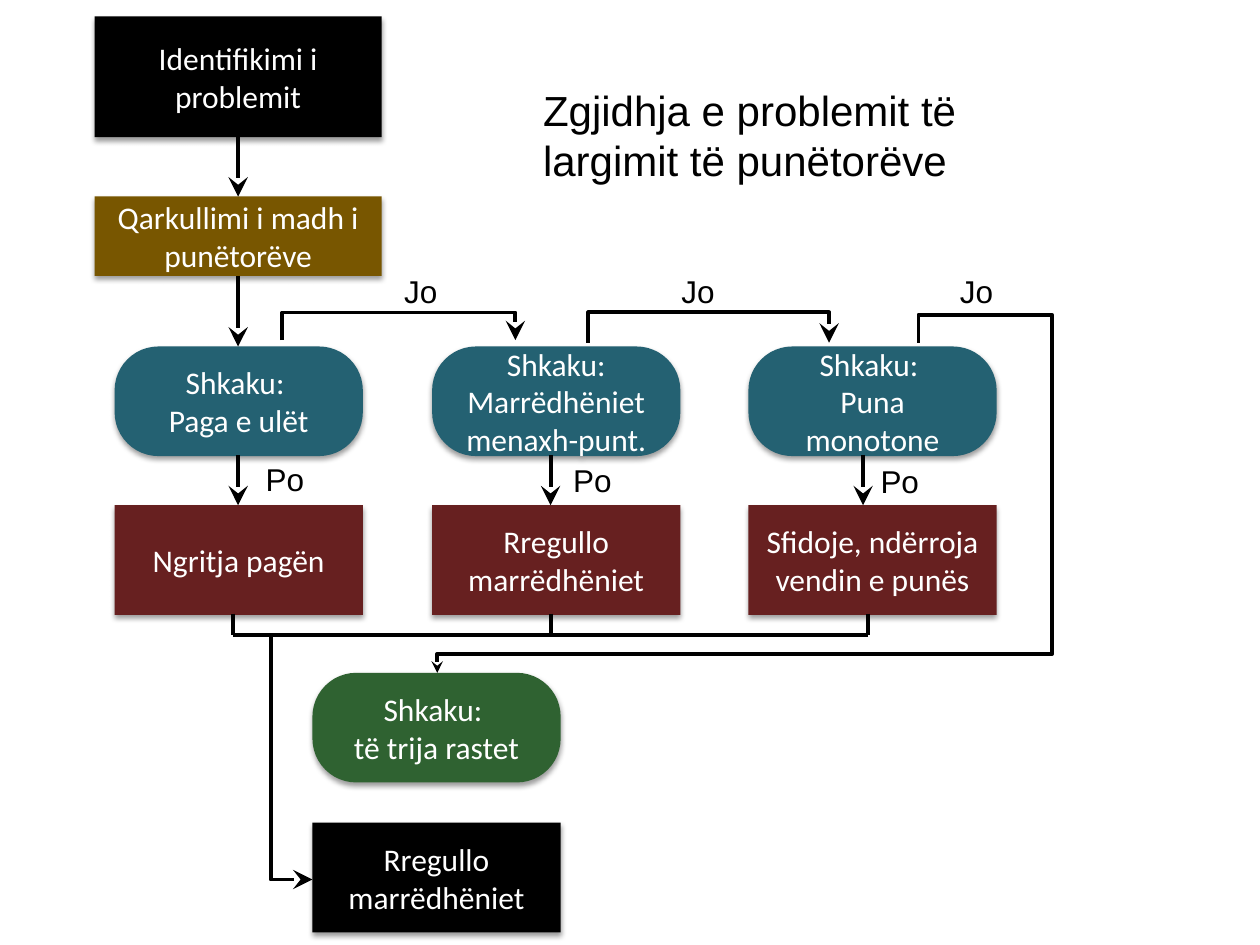
from lxml import etree
from pptx import Presentation
from pptx.dml.color import RGBColor
from pptx.enum import shapes, text
from pptx.oxml import ns
from pptx.util import Inches, Pt

COLORS = {
    "black": "000000",
    "white": "FFFFFF",
    "brown": "785600",
    "cause": "246172",
    "remedy": "672020",
    "all_causes": "2F6231",
}
RECT = shapes.MSO_SHAPE.RECTANGLE
ROUND = shapes.MSO_SHAPE.ROUNDED_RECTANGLE
HEAD_SIZE = (2.28, 0.96)
TURNOVER_SIZE = (2.28, 0.63)
NODE_SIZE = (1.97, 0.87)
COLUMNS = (0.91, 3.43, 5.94)
CAUSE_TOP, REMEDY_TOP, JOIN_Y = 2.75, 4.01, 5.04


def rgb(name):
    return RGBColor.from_string(COLORS[name])


def sub(parent, tag, **attrs):
    return etree.SubElement(parent, ns.qn(tag), attrs)


def write(tf, words, size, font, color, align):
    tf.text = words
    tf.word_wrap = True
    for p in tf.paragraphs:
        p.alignment = align
        for r in p.runs:
            for key, value in {"size": Pt(size), "name": font}.items():
                setattr(r.font, key, value)
            r.font.color.rgb = rgb(color)


def add_soft_shadow(sp):
    sp.shadow.inherit = False
    effects = sp._element.spPr.find(ns.qn("a:effectLst"))
    shadow = sub(effects, "a:outerShdw", blurRad=str(Pt(3.1)), dist=str(Pt(2)),
                 dir="5400000", rotWithShape="0")
    sub(sub(shadow, "a:srgbClr", val=COLORS["black"]), "a:alpha", val="38000")


def add_node(slide, words, kind, left, top, size, color):
    sp = slide.shapes.add_shape(kind, *map(Inches, (left, top, *size)))
    if kind == ROUND:
        sp.adjustments[0] = 0.4
    sp.fill.solid()
    sp.fill.fore_color.rgb = rgb(color)
    sp.line.fill.background()
    add_soft_shadow(sp)
    write(sp.text_frame, words, 18, "Calibri", "white", text.PP_ALIGN.CENTER)
    sp.text_frame.vertical_anchor = text.MSO_ANCHOR.MIDDLE


def style_line(line, head=None):
    """Draw a black line; head is the arrowhead size, "med" or "lg"."""
    line.width = Pt(2.25)
    line.color.rgb = rgb("black")
    if head:
        sub(line._get_or_add_ln(), "a:tailEnd", type="stealth", w=head, len=head)


def add_line(slide, start, end, head=None):
    cx = slide.shapes.add_connector(
        shapes.MSO_CONNECTOR.STRAIGHT, *map(Inches, (*start, *end)))
    style_line(cx.line, head)
    sub(cx._element.spPr, "a:effectLst")


def add_bent_arrow(slide, points, head="lg"):
    start, *rest = [(Inches(x), Inches(y)) for x, y in points]
    builder = slide.shapes.build_freeform(*start)
    builder.add_line_segments(rest, close=False)
    sp = builder.convert_to_shape()
    sp.fill.background()
    style_line(sp.line, head)
    sp.shadow.inherit = False


def add_label(slide, words, left, top, width):
    box = slide.shapes.add_textbox(*map(Inches, (left, top, width, 0.4)))
    write(box.text_frame, words, 18, "Arial", "black", text.PP_ALIGN.LEFT)


def set_title(slide, words):
    title = slide.shapes.title
    place = {"left": 4.21, "top": 0.62, "width": 4.57, "height": 0.91}
    for key, value in place.items():
        setattr(title, key, Inches(value))
    write(title.text_frame, words, 24, "Arial", "black", text.PP_ALIGN.LEFT)
    title.text_frame.vertical_anchor = text.MSO_ANCHOR.TOP
    title.text_frame.auto_size = text.MSO_AUTO_SIZE.NONE


def add_nodes(slide):
    add_node(slide, "Identifikimi i problemit", RECT, 0.75, 0.13, HEAD_SIZE, "black")
    add_node(slide, "Qarkullimi i madh i punëtorëve", RECT, 0.75, 1.56,
             TURNOVER_SIZE, "brown")
    causes = ("Shkaku: \nPaga e ulët", "Shkaku: Marrëdhëniet menaxh-punt.",
              "Shkaku: \nPuna monotone")
    remedies = ("Ngritja pagën", "Rregullo marrëdhëniet",
                "Sfidoje, ndërroja vendin e punës")
    for left, cause, remedy in zip(COLUMNS, causes, remedies):
        add_node(slide, cause, ROUND, left, CAUSE_TOP, NODE_SIZE, "cause")
        add_node(slide, remedy, RECT, left, REMEDY_TOP, NODE_SIZE, "remedy")
    add_node(slide, "Shkaku: \ntë trija rastet", ROUND, 2.48, 5.34, NODE_SIZE,
             "all_causes")
    add_node(slide, "Rregullo marrëdhëniet", RECT, 2.48, 6.53, NODE_SIZE, "black")


def add_flow(slide):
    for x, top, bottom in ((1.89, 1.09, 1.56), (1.89, 2.19, CAUSE_TOP),
                           (1.89, 3.61, REMEDY_TOP), (4.37, 3.61, REMEDY_TOP),
                           (6.85, 3.61, REMEDY_TOP)):
        add_line(slide, (x, top), (x, bottom), head="lg")
    for x in (1.85, 4.37, 6.89):
        add_line(slide, (x, 4.87), (x, JOIN_Y))
    add_line(slide, (1.85, JOIN_Y), (6.89, JOIN_Y))

    for start, end, foot in ((2.24, 4.09, 2.7), (4.67, 6.58, 2.72)):
        add_bent_arrow(slide, [(start, foot), (start, 2.48), (end, 2.48), (end, foot)])
    add_bent_arrow(slide, [(7.29, 2.72), (7.29, 2.5), (8.35, 2.5), (8.35, 5.19),
                           (3.47, 5.19), (3.47, 5.34)], head="med")
    add_bent_arrow(slide, [(2.15, JOIN_Y), (2.15, 6.98), (2.48, 6.98)])


def add_answers(slide):
    for left in (3.11, 5.31, 7.52):
        add_label(slide, "Jo", left, 2.11, 0.47)
    for left, top in ((2.01, 3.6), (4.45, 3.61), (6.89, 3.62)):
        add_label(slide, "Po", left, top, 0.63)


def main():
    prs = Presentation()
    prs.slide_width, prs.slide_height = Inches(10), Inches(7.5)
    slide = prs.slides.add_slide(prs.slide_layouts[5])
    set_title(slide, "Zgjidhja e problemit të largimit të punëtorëve")
    add_nodes(slide)
    add_flow(slide)
    add_answers(slide)
    prs.save("out.pptx")


if __name__ == "__main__":
    main()
